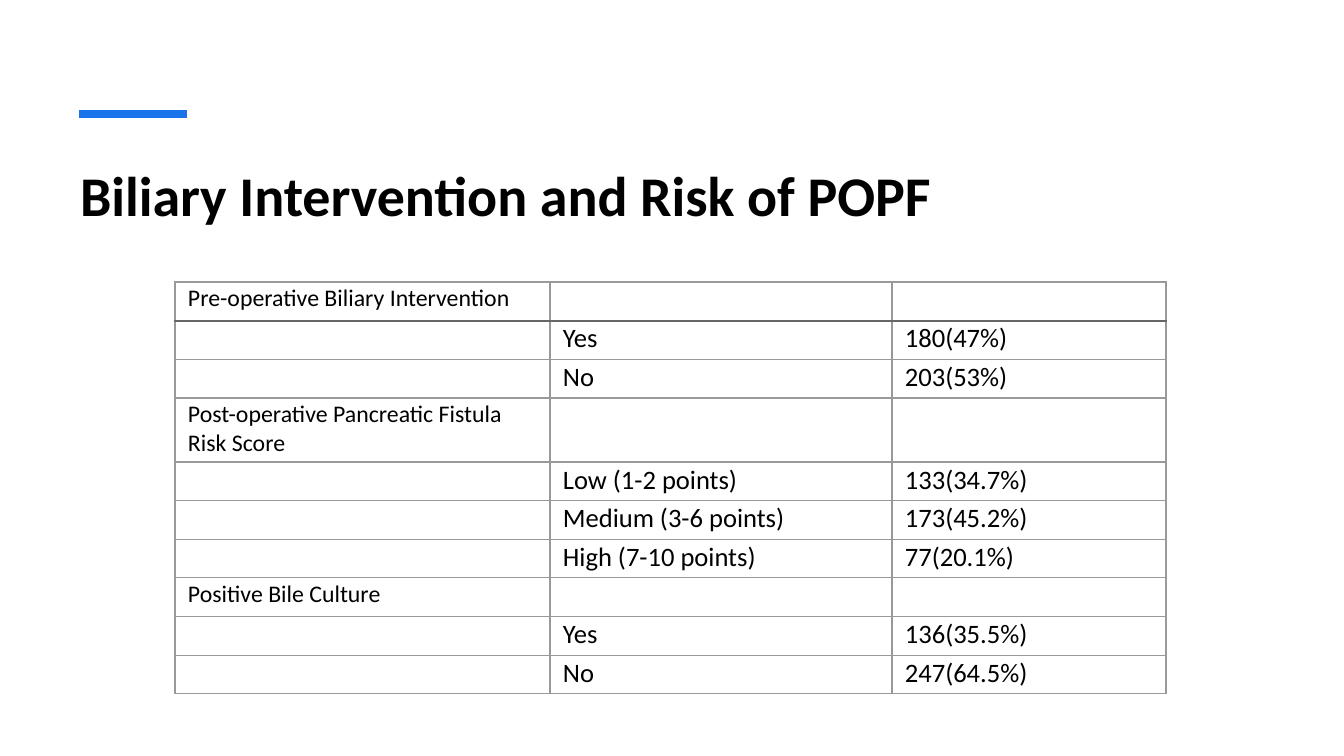
from lxml import etree
from pptx import Presentation
from pptx.dml.color import RGBColor
from pptx.enum.shapes import MSO_CONNECTOR
from pptx.enum.text import MSO_ANCHOR, PP_ALIGN
from pptx.oxml.ns import qn
from pptx.util import Emu, Pt

STRAIGHT = MSO_CONNECTOR.STRAIGHT
TOP = MSO_ANCHOR.TOP
LEFT = PP_ALIGN.LEFT
TITLE_ONLY = 5

FONT = "Calibri"
COLORS = {"text": "000000", "accent": "1973EB", "grid": "999999", "header": "666666"}

ROWS = [
    ("Pre-operative Biliary Intervention", "", ""),
    ("", "Yes", "180(47%)"),
    ("", "No", "203(53%)"),
    ("Post-operative Pancreatic Fistula Risk Score", "", ""),
    ("", "Low (1-2 points)", "133(34.7%)"),
    ("", "Medium (3-6 points)", "173(45.2%)"),
    ("", "High (7-10 points)", "77(20.1%)"),
    ("Positive Bile Culture", "", ""),
    ("", "Yes", "136(35.5%)"),
    ("", "No", "247(64.5%)"),
]
COL_WIDTHS = (375, 342, 274)
TALL_ROW, TALL_HEIGHT = 3, 64


def px(n):
    return Emu(round(n * 914400 / 100.8))


def color(name):
    return RGBColor.from_string(COLORS[name])


def add_run(p, text, size, bold=False):
    r = p.add_run()
    r.text = text
    r.font.name = FONT
    r.font.size = Pt(size)
    r.font.bold = bold
    r.font.color.rgb = color("text")


def set_margins(target, left, top, right, bottom):
    target.margin_left, target.margin_top = px(left), px(top)
    target.margin_right, target.margin_bottom = px(right), px(bottom)


def add_title(s, x, y, w, h):
    title = s.shapes.title
    title.left, title.top, title.width, title.height = px(x), px(y), px(w), px(h)
    tf = title.text_frame
    tf.word_wrap = True
    tf.vertical_anchor = TOP
    set_margins(tf, 9, 9, 9, 5)
    p = tf.paragraphs[0]
    p.alignment = LEFT
    add_run(p, "Biliary Intervention and Risk of POPF", 40, bold=True)


def add_accent(s, x, y, w):
    line = s.shapes.add_connector(STRAIGHT, px(x), px(y), px(x + w), px(y))
    line.line.color.rgb = color("accent")
    line.line.width = Pt(6)
    etree.SubElement(line._element.spPr, qn("a:effectLst"))


def set_border(cell, side, name, width):
    """Append one border; sides must come in the order L, R, T, B, before the fill."""
    ln = etree.SubElement(cell._tc.get_or_add_tcPr(), qn(f"a:ln{side}"), w=str(Pt(width)))
    fill = etree.SubElement(ln, qn("a:solidFill"))
    etree.SubElement(fill, qn("a:srgbClr"), val=COLORS[name])


def format_cell(cell, row):
    set_margins(cell, 13, 2, 13, 0)
    cell.vertical_anchor = TOP
    header_side = {0: "B", 1: "T"}.get(row)
    for side in "LRTB":
        if side == header_side:
            set_border(cell, side, "header", 1.5)
        else:
            set_border(cell, side, "grid", 1)
    cell.fill.background()


def add_risk_table(s, x, y, h):
    frame = s.shapes.add_table(len(ROWS), len(COL_WIDTHS), px(x), px(y),
                               px(sum(COL_WIDTHS)), px(h))
    table = frame.table
    table.first_row = table.horz_banding = False
    for column, width in zip(table.columns, COL_WIDTHS):
        column.width = px(width)
    row_height = (h - TALL_HEIGHT) / (len(ROWS) - 1)
    for i, texts in enumerate(ROWS):
        table.rows[i].height = px(TALL_HEIGHT if i == TALL_ROW else row_height)
        for j, text in enumerate(texts):
            cell = table.cell(i, j)
            format_cell(cell, i)
            if text:
                add_run(cell.text_frame.paragraphs[0], text, 17 if j == 0 else 19)


def main():
    prs = Presentation()
    prs.slide_width, prs.slide_height = px(1344), px(756)
    s = prs.slides.add_slide(prs.slide_layouts[TITLE_ONLY])
    add_title(s, 71, 151, 1200, 121)
    add_accent(s, 79, 114, 108)
    add_risk_table(s, 175, 282, 412)
    prs.save("out.pptx")


if __name__ == "__main__":
    main()
